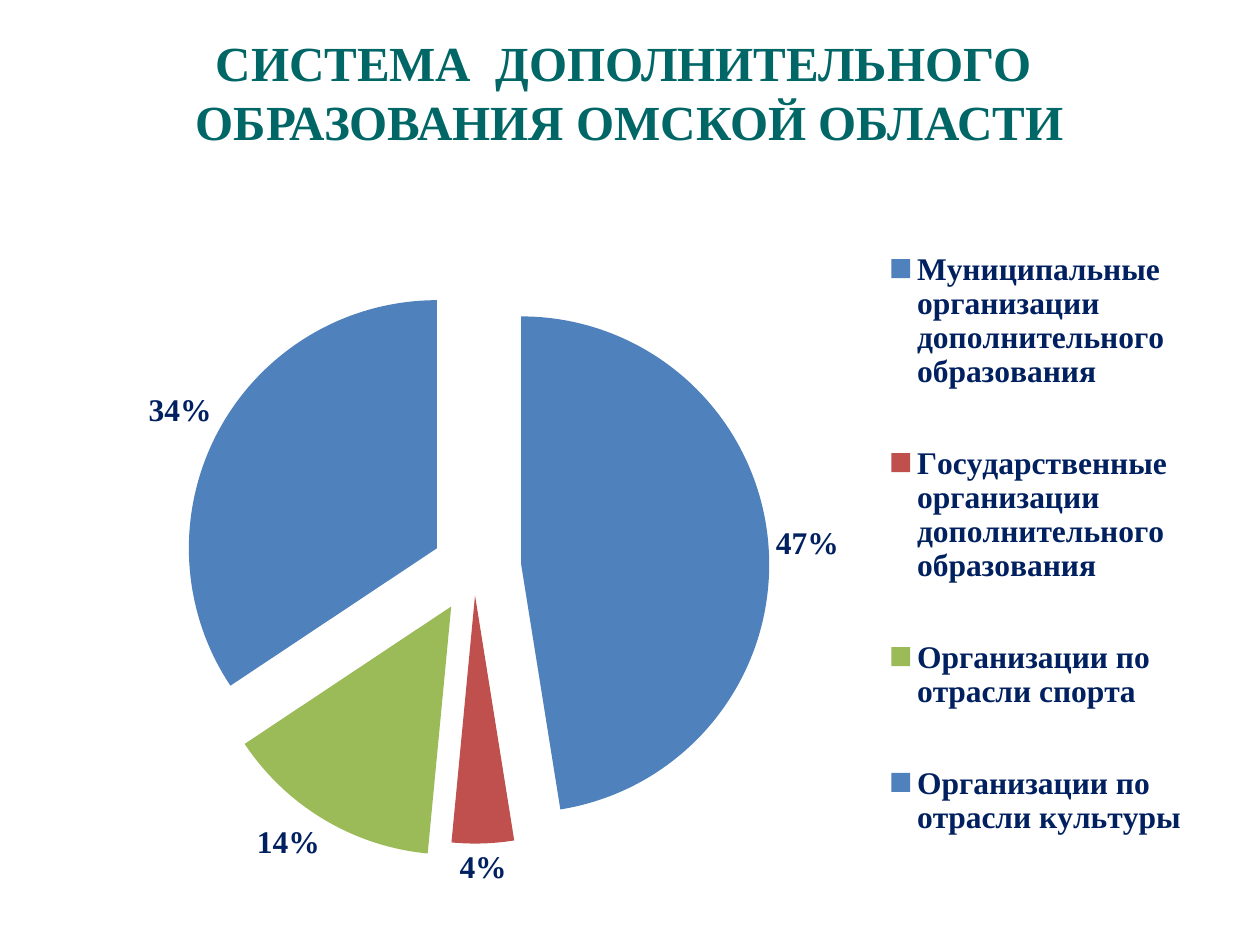
from pptx import Presentation
from pptx.chart.data import CategoryChartData as PieData
from pptx.dml.color import RGBColor as Rgb
from pptx.enum.chart import XL_CHART_TYPE as Kind, XL_LABEL_POSITION as Spot
from pptx.enum.chart import XL_LEGEND_POSITION as Side
from pptx.enum.text import MSO_ANCHOR as Anchor, MSO_AUTO_SIZE as Fit, PP_ALIGN as Align
from pptx.oxml import parse_xml
from pptx.oxml.ns import nsdecls, qn
from pptx.util import Cm, Pt

# Content
HEAD = ["СИСТЕМА  ДОПОЛНИТЕЛЬНОГО", " ОБРАЗОВАНИЯ ОМСКОЙ ОБЛАСТИ"]
# Name, value, colour, distance from the centre in percent
PARTS = [
    ("Муниципальные организации дополнительного образования", 47, "blue", 19),
    ("Государственные организации дополнительного образования", 4, "red", 11),
    ("Организации по отрасли спорта", 14, "green", 18),
    ("Организации по отрасли культуры", 34, "blue", 17),
]
SPREAD = 25

# Colours, font and type sizes
THEME = {
    "font": "Times New Roman",
    "head": ("006666", 28),
    "label": ("002060", 18),
    "blue": "4F81BD",
    "red": "C0504D",
    "green": "9BBB59",
}

# Places: left, top, width, height
HEAD_BOX = [Cm(n) for n in (-0.23, 0.53, 25.6, 2.64)]
PIE_BOX = [Cm(n) for n in (1.3, 3.94, 23.6, 14.05)]
PLOT = (0.05, 0.09, 0.6, 0.89)    # shares of the chart
LEGEND = (0.68, 0, 0.3, 1)


def style(font, role):
    tint, size = THEME[role]
    font.name, font.size, font.bold = THEME["font"], Pt(size), True
    font.color.rgb = Rgb.from_string(tint)


def burst(share):
    return parse_xml(f'<c:explosion {nsdecls("c")} val="{share}"/>')


def place(node, index, box, inner=""):
    """Give a plot area or a legend a fixed place in the chart."""
    old = node.find(qn("c:layout"))
    if old is not None:
        node.remove(old)
    modes = "".join(f'<c:{a}Mode val="edge"/>' for a in "xy")
    sizes = "".join(f'<c:{a} val="{n}"/>' for a, n in zip("xywh", box))
    node.insert(index, parse_xml(
        f'<c:layout {nsdecls("c")}><c:manualLayout>{inner}{modes}{sizes}'
        '</c:manualLayout></c:layout>'))


def add_head(slide):
    title = slide.shapes.title
    title.left, title.top, title.width, title.height = HEAD_BOX
    frame = title.text_frame
    frame.word_wrap, frame.auto_size = True, Fit.SHAPE_TO_FIT_TEXT
    frame.vertical_anchor = Anchor.TOP
    for i, line in enumerate(HEAD):
        para = frame.add_paragraph() if i else frame.paragraphs[0]
        para.alignment = Align.CENTER
        run = para.add_run()
        run.text = line
        style(run.font, "head")


def add_pie(slide):
    names, vals, tints, shares = zip(*PARTS)
    data = PieData()
    data.categories = names
    data.add_series("Series 1", vals)
    chart = slide.shapes.add_chart(Kind.PIE, *PIE_BOX, data).chart
    chart.has_title = False
    style(chart.font, "label")

    # Slices
    plot = chart.plots[0]
    plot.vary_by_categories = True
    series = plot.series[0]
    for i, tint in enumerate(tints):
        fill = series.points[i].format.fill
        fill.solid()
        fill.fore_color.rgb = Rgb.from_string(THEME[tint])
    slices = series._element.findall(qn("c:dPt"))
    slices[0].addprevious(burst(SPREAD))
    for part, share in zip(slices, shares):
        part.find(qn("c:spPr")).addprevious(burst(share))

    # Labels
    plot.has_data_labels = True
    labels = series.data_labels
    labels.show_percentage, labels.show_value = True, False
    labels.number_format, labels.number_format_is_linked = "0%", False
    labels.position = Spot.OUTSIDE_END
    style(labels.font, "label")

    # Legend and places
    chart.has_legend = True
    legend = chart.legend
    legend.position, legend.include_in_layout = Side.RIGHT, False
    style(legend.font, "label")
    place(legend._element, 1, LEGEND)
    area = chart._chartSpace.chart.plotArea
    place(area, 0, PLOT, '<c:layoutTarget val="inner"/>')


def main():
    deck = Presentation()
    deck.slide_width, deck.slide_height = Cm(25.4), Cm(19.05)
    slide = deck.slides.add_slide(deck.slide_layouts[5])
    add_head(slide)
    add_pie(slide)
    deck.save("out.pptx")


if __name__ == "__main__":
    main()
